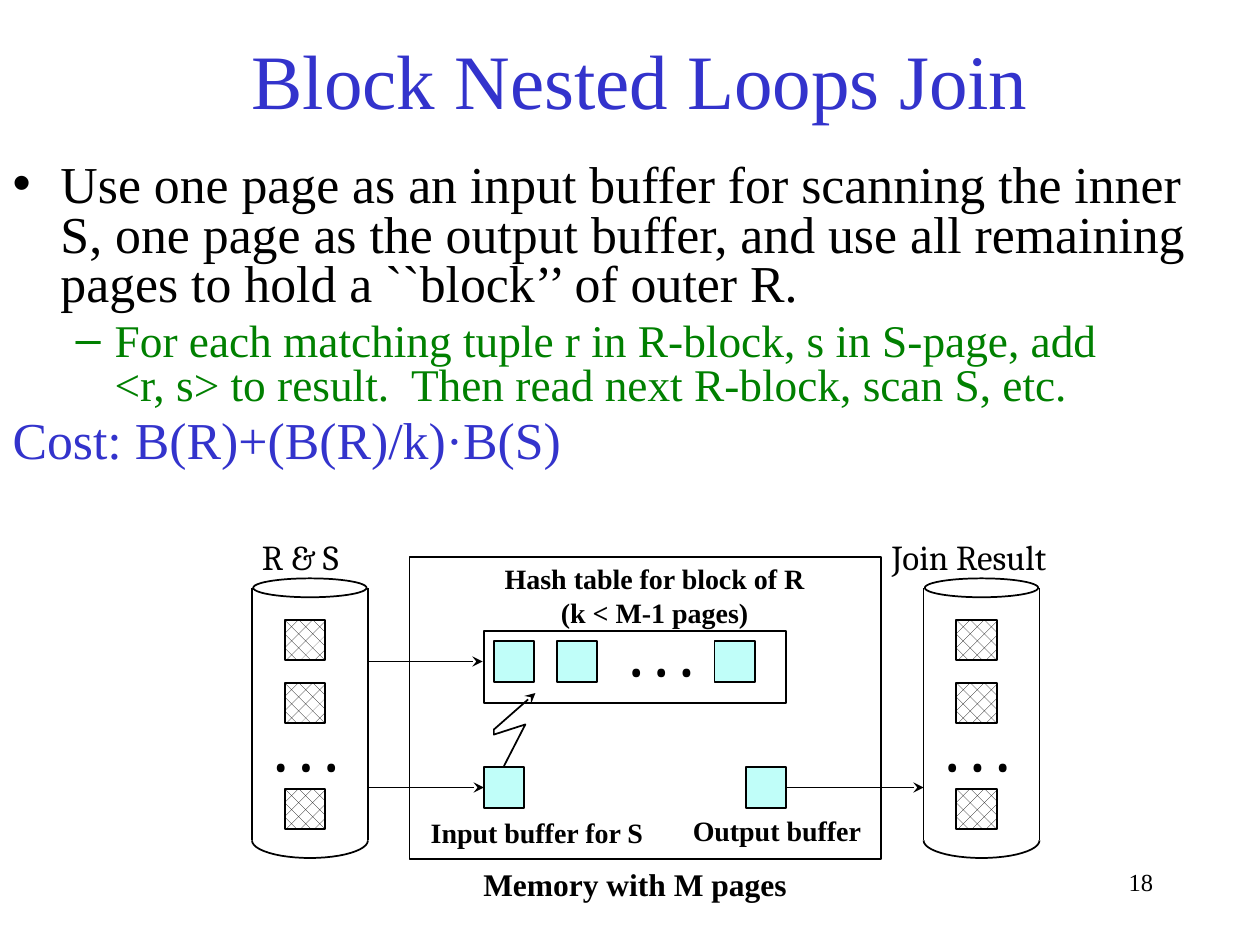
"""Build the Block Nested Loops Join slide."""
from math import cos, pi, sin

from lxml.etree import SubElement
from pptx import Presentation
from pptx.dml.color import RGBColor
from pptx.enum.dml import MSO_PATTERN as Pat
from pptx.enum.shapes import MSO_CONNECTOR as Conn, MSO_SHAPE as Form
from pptx.enum.text import MSO_AUTO_SIZE as Auto, PP_ALIGN as Align
from pptx.oxml.ns import qn
from pptx.util import Inches, Pt

rgb = RGBColor.from_string
ROMAN = "Times New Roman"
BLACK, BLUE, GREEN, AQUA = "000000", "3333CC", "008000", "C0FEF9"
SIDE = 0.32


def pen(item, fill=None, head=False):
    """Give an outline, and a fill or an arrowhead where asked."""
    item.line.width = Pt(1)
    item.line.color.rgb = rgb(BLACK)
    props = item.element.spPr
    if head:
        SubElement(props.find(qn("a:ln")), qn("a:tailEnd"), type="stealth")
    if not hasattr(item, "fill"):
        SubElement(props, qn("a:effectLst"))
        return item
    item.shadow.inherit = False
    if fill == "hatch":
        item.fill.patterned()
        item.fill.pattern = Pat.PERCENT_25
        item.fill.fore_color.rgb = rgb(BLACK)
        item.fill.back_color.rgb = rgb("FFFFFF")
    elif fill:
        item.fill.solid()
        item.fill.fore_color.rgb = rgb(fill)
    else:
        item.fill.background()
    return item


def note(home, text, box, size, name=ROMAN, bold=True, align=Align.LEFT, wrap=False):
    """Add a text box with one style for all its lines."""
    frame = home.add_textbox(*map(Inches, box)).text_frame
    frame.word_wrap = wrap
    frame.text = text
    for para in frame.paragraphs:
        para.alignment = align
        look = {"size": Pt(size), "name": name, "bold": bold}
        for key, val in look.items():
            setattr(para.font, key, val)
        para.font.color.rgb = rgb(BLACK)


deck = Presentation()
deck.slide_width, deck.slide_height = Inches(10), Inches(7.5)
slide = deck.slides.add_slide(deck.slide_layouts[1])
shapes = slide.shapes
title, body = slide.placeholders

places = [(title, (0.83, 0, 8.5, 1.25)), (body, (0, 1.25, 9.75, 2.67))]
for holder, box in places:
    for key, val in zip(("left", "top", "width", "height"), box):
        setattr(holder, key, Inches(val))
    holder.text_frame.auto_size = Auto.NONE

title.text_frame.text = "Block Nested Loops Join"
lines = [
    ("Use one page as an input buffer for scanning the inner S, one page as the "
     "output buffer, and use all remaining pages to hold a ``block’’ of outer R.",
     0, 29.6, BLACK, 0.38, -0.38),
    ("For each matching tuple r in R-block, s in S-page, add\v"
     "<r, s> to result.  Then read next R-block, scan S, etc.",
     1, 25.9, GREEN, 0.81, -0.31),
    ("Cost: B(R)+(B(R)/k)·B(S)", 0, 29.6, BLUE, 0, 0),
]
body.text_frame.text = "\n".join(line[0] for line in lines)
paras = body.text_frame.paragraphs
looks = [(title.text_frame.paragraphs[0], 44, BLUE)]
for para, (_, level, size, color, left, dent) in zip(paras, lines):
    para.level = level
    para.line_spacing = 0.8
    props = para._p.get_or_add_pPr()
    props.set("marL", str(Inches(left)))
    props.set("indent", str(Inches(dent)))
    looks.append((para, size, color))
SubElement(paras[2]._p.get_or_add_pPr(), qn("a:buNone"))
for para, size, color in looks:
    for run in para.runs:
        for key, val in {"size": Pt(size), "name": ROMAN}.items():
            setattr(run.font, key, val)
        run.font.color.rgb = rgb(color)

for left in (2, 7.33):
    disk = shapes.add_group_shape().shapes
    lid = [Inches(n) for n in (left + 0.01, 4.59, 0.9, 0.15)]
    pen(disk.add_shape(Form.OVAL, *lid))
    for x in (left, left + 0.92):
        ends = [Inches(n) for n in (x, 4.67, x, 6.67)]
        pen(disk.add_connector(Conn.STRAIGHT, *ends))
    curve = [(Inches(left + 0.46 + 0.46 * cos(pi * i / 24)),
              Inches(6.67 + 0.14 * sin(pi * i / 24))) for i in range(25)]
    base = disk.build_freeform(*curve[0])
    base.add_line_segments(curve[1:], close=False)
    pen(base.convert_to_shape())
    for top in (4.92, 5.42, 6.26):
        page = [Inches(n) for n in (left + 0.3 - SIDE / 2 + 0.12, top, SIDE, SIDE)]
        pen(disk.add_shape(Form.RECTANGLE, *page), "hatch")
    note(disk, ". . .", (left + 0.08, 5.64, 0.76, 0.63), 32, "Cambria")

blocks = [
    (3.25, 4.42, 3.74, 2.4, None), (3.84, 5.01, 2.4, 0.57, None),
    (3.92, 5.09, SIDE, SIDE, AQUA), (4.42, 5.09, SIDE, SIDE, AQUA),
    (5.67, 5.09, SIDE, SIDE, AQUA), (3.84, 6.09, SIDE, SIDE, AQUA),
    (5.92, 6.09, SIDE, SIDE, AQUA),
]
rects = [pen(shapes.add_shape(Form.RECTANGLE, *map(Inches, box)), fill)
         for *box, fill in blocks]
source, sink = rects[-2:]

flows = [(2.92, 5.25, 3.83, 5.25), (2.92, 6.25, 3.84, 6.25), (6.24, 6.25, 7.33, 6.25)]
arrows = [pen(shapes.add_connector(Conn.STRAIGHT, *map(Inches, ends)), head=True)
          for ends in flows]
arrows[1].end_connect(source, 1)
arrows[2].begin_connect(sink, 3)

bolt = [(4, 6.08), (4.17, 5.75), (3.92, 5.83), (3.92, 5.79), (4.25, 5.5)]
bolt = [(Inches(x), Inches(y)) for x, y in bolt]
path = shapes.build_freeform(*bolt[0])
path.add_line_segments(bolt[1:], close=False)
pen(path.convert_to_shape(), head=True)

mid = {"align": Align.CENTER}
plain = {"name": "Cambria", "bold": False}
notes = [
    (". . .", (4.9, 4.88, 0.76, 0.63), 32, {"name": "Cambria"}),
    ("R & S", (1.98, 4.2, 0.89, 0.43), 20, plain),
    ("Join Result", (6.98, 4.2, 1.53, 0.43), 20, plain),
    ("Hash table for block of R\n(k < M-1 pages)", (3.9, 4.41, 2.59, 0.64), 16, mid),
    ("Input buffer for S", (3.32, 6.42, 1.9, 0.37), 16, {}),
    ("Output buffer", (5.4, 6.41, 1.54, 0.37), 16, {}),
    ("Memory with M pages", (3.19, 6.82, 3.7, 0.4), 18, {**mid, "wrap": True}),
    ("18", (7.17, 6.83, 2.08, 0.5), 14,
     {"bold": False, "align": Align.RIGHT, "wrap": True}),
]
for text, box, size, more in notes:
    note(shapes, text, box, size, **more)

deck.save("out.pptx")
